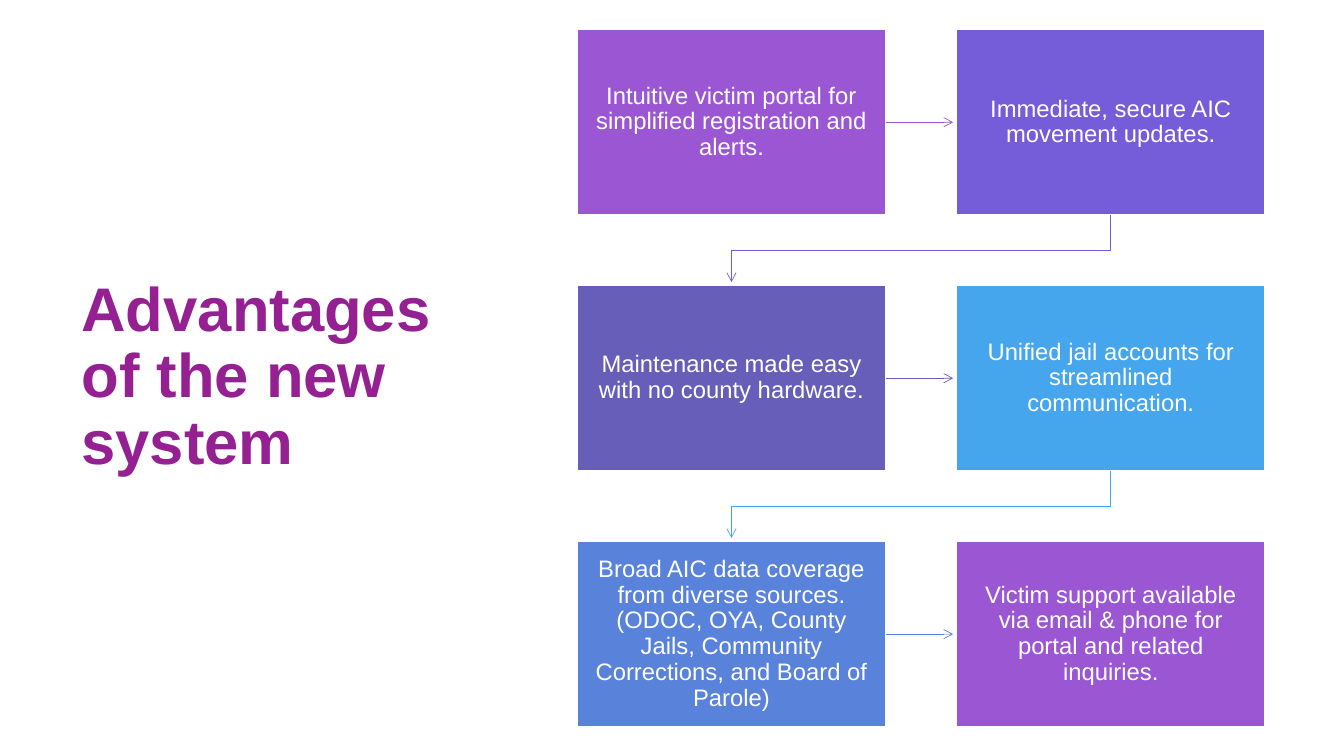
from pptx import Presentation
from pptx.dml.color import RGBColor
from pptx.enum.shapes import MSO_CONNECTOR as Connector, MSO_SHAPE as Shape
from pptx.enum.text import MSO_ANCHOR as Anchor, MSO_AUTO_SIZE as AutoSize, PP_ALIGN as Align
from pptx.oxml.ns import qn
from pptx.util import Cm, Pt
from lxml.etree import SubElement

COLUMNS = 2
BOX_WIDTH, BOX_HEIGHT = 7.77, 4.66
ARROW_START, ARROW_END = 0.02, 0.09
STEPS = [
    ("Intuitive victim portal for simplified registration and alerts.", "9B57D3"),
    ("Immediate, secure AIC movement updates.", "755DD9"),
    ("Maintenance made easy with no county hardware.", "665EB8"),
    ("Unified jail accounts for streamlined communication.", "45A5ED"),
    ("Broad AIC data coverage from diverse sources.(ODOC, OYA, County Jails, "
     "Community Corrections, and Board of Parole)", "5982DB"),
    ("Victim support available via email & phone for portal and related inquiries.", "9B57D3"),
]


def colour(value):
    return RGBColor.from_string(value)


def write(frame, text, size, value, align, bold=False):
    frame.text = text
    frame.word_wrap = True
    frame.auto_size = AutoSize.NONE
    frame.vertical_anchor = Anchor.MIDDLE
    para = frame.paragraphs[0]
    para.alignment = align
    para.line_spacing = 0.9
    for span in para.runs:
        span.font.name = "Arial"
        span.font.size = Pt(size)
        span.font.bold = bold
        span.font.color.rgb = colour(value)


def add_title(page, left, top, width, height):
    title = page.shapes.title
    title.left, title.top = Cm(left), Cm(top)
    title.width, title.height = Cm(width), Cm(height)
    write(title.text_frame, "Advantages of the new system", 44, "942092", Align.LEFT, True)


def add_step(page, left, top, text, fill):
    box = page.shapes.add_shape(Shape.RECTANGLE, Cm(left), Cm(top), Cm(BOX_WIDTH), Cm(BOX_HEIGHT))
    box.shadow.inherit = False
    box.fill.solid()
    box.fill.fore_color.rgb = colour(fill)
    box.line.color.rgb = colour("FFFFFF")
    box.line.width = Pt(1)
    frame = box.text_frame
    frame.margin_left = frame.margin_right = Cm(0.38)
    frame.margin_top = frame.margin_bottom = Cm(0.4)
    write(frame, text, 17, "FFFFFF", Align.CENTER)


def style_arrow(arrow, value):
    arrow.line.color.rgb = colour(value)
    arrow.line.width = Pt(0.5)
    properties = arrow.element.spPr
    SubElement(properties.find(qn("a:ln")), qn("a:tailEnd"), type="arrow")
    SubElement(properties, qn("a:effectLst"))


def add_straight_arrow(page, left, top, gap, value):
    start = left + BOX_WIDTH + ARROW_START
    end = left + BOX_WIDTH + gap - ARROW_END
    middle = top + BOX_HEIGHT / 2
    arrow = page.shapes.add_connector(Connector.STRAIGHT, Cm(start), Cm(middle), Cm(end), Cm(middle))
    style_arrow(arrow, value)


def add_return_arrow(page, left, top, first_left, gap, value):
    bottom = top + BOX_HEIGHT
    start, end = Cm(left + BOX_WIDTH / 2), Cm(first_left + BOX_WIDTH / 2)
    bend = Cm(bottom + gap / 2)
    builder = page.shapes.build_freeform(start, Cm(bottom + ARROW_START))
    builder.add_line_segments(
        [(start, bend), (end, bend), (end, Cm(bottom + gap - ARROW_END))], close=False)
    arrow = builder.convert_to_shape()
    arrow.fill.background()
    style_arrow(arrow, value)


def add_flow(page, left, top, width, height):
    rows = len(STEPS) // COLUMNS
    column_gap = (width - COLUMNS * BOX_WIDTH) / (COLUMNS - 1)
    row_gap = (height - rows * BOX_HEIGHT) / (rows - 1)
    for index, (text, value) in enumerate(STEPS):
        row, column = divmod(index, COLUMNS)
        x = left + column * (BOX_WIDTH + column_gap)
        y = top + row * (BOX_HEIGHT + row_gap)
        add_step(page, x, y, text, value)
        if column < COLUMNS - 1:
            add_straight_arrow(page, x, y, column_gap, value)
        elif row < rows - 1:
            add_return_arrow(page, x, y, left, row_gap, value)


def main():
    deck = Presentation()
    deck.slide_width, deck.slide_height = Cm(33.87), Cm(19.05)
    page = deck.slides.add_slide(deck.slide_layouts[5])
    add_title(page, 1.8, 3.05, 10.54, 12.95)
    add_flow(page, 14.55, 0.75, 17.33, 17.56)
    deck.save("out.pptx")


if __name__ == "__main__":
    main()
